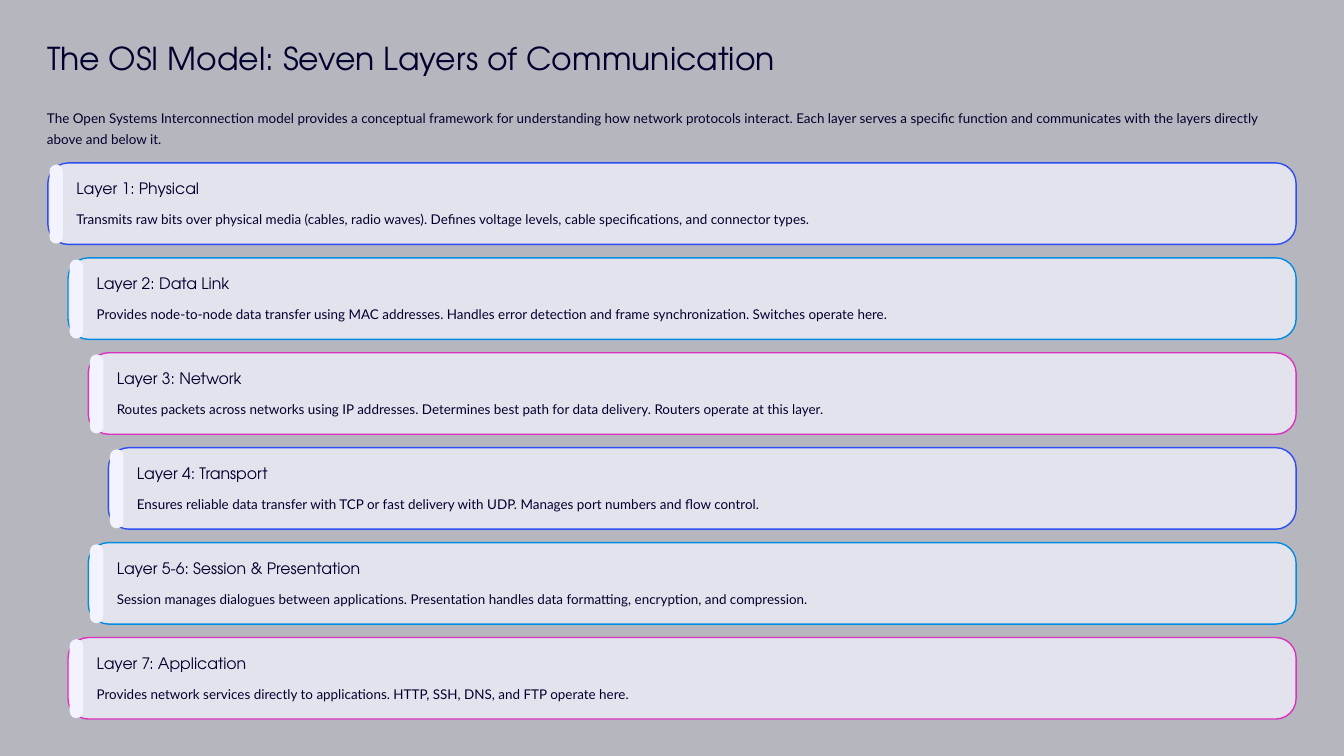
from dataclasses import dataclass

from lxml.etree import SubElement
from pptx import Presentation
from pptx.dml.color import RGBColor
from pptx.enum.shapes import MSO_SHAPE
from pptx.enum.text import MSO_ANCHOR, MSO_AUTO_SIZE, PP_ALIGN
from pptx.oxml.ns import qn
from pptx.util import Emu, Pt

TITLE = "The OSI Model: Seven Layers of Communication"
INTRO = (
    "The Open Systems Interconnection model provides a conceptual framework for "
    "understanding how network protocols interact. Each layer serves a specific "
    "function and communicates with the layers directly above and below it."
)
# Indent level, heading, description
LAYERS = [
    (0, "Layer 1: Physical",
     "Transmits raw bits over physical media (cables, radio waves). "
     "Defines voltage levels, cable specifications, and connector types."),
    (1, "Layer 2: Data Link",
     "Provides node-to-node data transfer using MAC addresses. "
     "Handles error detection and frame synchronization. Switches operate here."),
    (2, "Layer 3: Network",
     "Routes packets across networks using IP addresses. "
     "Determines best path for data delivery. Routers operate at this layer."),
    (3, "Layer 4: Transport",
     "Ensures reliable data transfer with TCP or fast delivery with UDP. "
     "Manages port numbers and flow control."),
    (2, "Layer 5-6: Session & Presentation",
     "Session manages dialogues between applications. "
     "Presentation handles data formatting, encryption, and compression."),
    (1, "Layer 7: Application",
     "Provides network services directly to applications. "
     "HTTP, SSH, DNS, and FTP operate here."),
]


@dataclass(frozen=True)
class Theme:
    ground: str = "B6B6BF"
    panel: str = "F3F3FF"
    ink: str = "00002E"
    edges: tuple = ("2D4DF2", "018CE1", "DA33BF")
    alpha: int = 75
    # Font, size, line pitch
    title: tuple = ("TeX Gyre Adventor", 27, 34)
    head: tuple = ("TeX Gyre Adventor", 13.5, 17)
    body: tuple = ("Lato", 11.5, 18.5)


THEME = Theme()
PX = 9144  # 100 px to the inch
WIDE, HIGH = 1600, 900
LEFT, RIGHT = 57, 1543
TOP, CARD, PITCH, STEP = 194, 97, 113, 24
BAR, INSET, PAD = 16, 2, 34


def place(item, x, y, w, h):
    item.left, item.top, item.width, item.height = (Emu(n * PX) for n in (x, y, w, h))


def write(item, text, style):
    """Set one left-aligned paragraph in a frame without margins."""
    font, size, pitch = style
    frame = item.text_frame
    frame.word_wrap = True
    frame.auto_size = MSO_AUTO_SIZE.NONE
    frame.vertical_anchor = MSO_ANCHOR.TOP
    frame.margin_left = frame.margin_right = 0
    frame.margin_top = frame.margin_bottom = 0
    para = frame.paragraphs[0]
    para.alignment = PP_ALIGN.LEFT
    para.line_spacing = Pt(pitch)
    run = para.add_run()
    run.text = text
    run.font.name = font
    run.font.size = Pt(size)
    run.font.color.rgb = RGBColor.from_string(THEME.ink)


def label(slide, box, text, style):
    item = slide.shapes.add_textbox(0, 0, 0, 0)
    place(item, *box)
    write(item, text, style)


def panel(slide, box, curve, edge=None):
    """Draw a rounded panel: see-through with an edge, solid without."""
    item = slide.shapes.add_shape(MSO_SHAPE.ROUNDED_RECTANGLE, 0, 0, 0, 0)
    place(item, *box)
    item.adjustments[0] = curve
    item.shadow.inherit = False
    item.fill.solid()
    item.fill.fore_color.rgb = RGBColor.from_string(THEME.panel)
    if edge is None:
        item.line.fill.background()
        return
    item.line.color.rgb = RGBColor.from_string(edge)
    item.line.width = Pt(1.2)
    tint = item.fill._xPr.find(qn("a:solidFill"))[0]
    SubElement(tint, qn("a:alpha"), val=str(THEME.alpha * 1000))


def layer(slide, row, level, head, body):
    x, y = LEFT + level * STEP, TOP + row * PITCH
    edge = THEME.edges[row % len(THEME.edges)]
    wide = RIGHT - x - PAD - INSET
    panel(slide, (x, y, RIGHT - x, CARD), 0.25, edge)
    panel(slide, (x + INSET, y + INSET, BAR, CARD - 3), 0.5)
    label(slide, (x + PAD, y + 18, wide, 24), head, THEME.head)
    label(slide, (x + PAD, y + 51, wide, 26), body, THEME.body)


def main():
    deck = Presentation()
    deck.slide_width, deck.slide_height = Emu(WIDE * PX), Emu(HIGH * PX)
    slide = deck.slides.add_slide(deck.slide_layouts[5])
    slide.background.fill.solid()
    slide.background.fill.fore_color.rgb = RGBColor.from_string(THEME.ground)
    place(slide.shapes.title, LEFT - 1, 44, RIGHT - LEFT, 47)
    write(slide.shapes.title, TITLE, THEME.title)
    label(slide, (LEFT - 1, 124, RIGHT - LEFT + 1, 52), INTRO, THEME.body)
    for row, item in enumerate(LAYERS):
        layer(slide, row, *item)
    deck.save("out.pptx")


if __name__ == "__main__":
    main()
